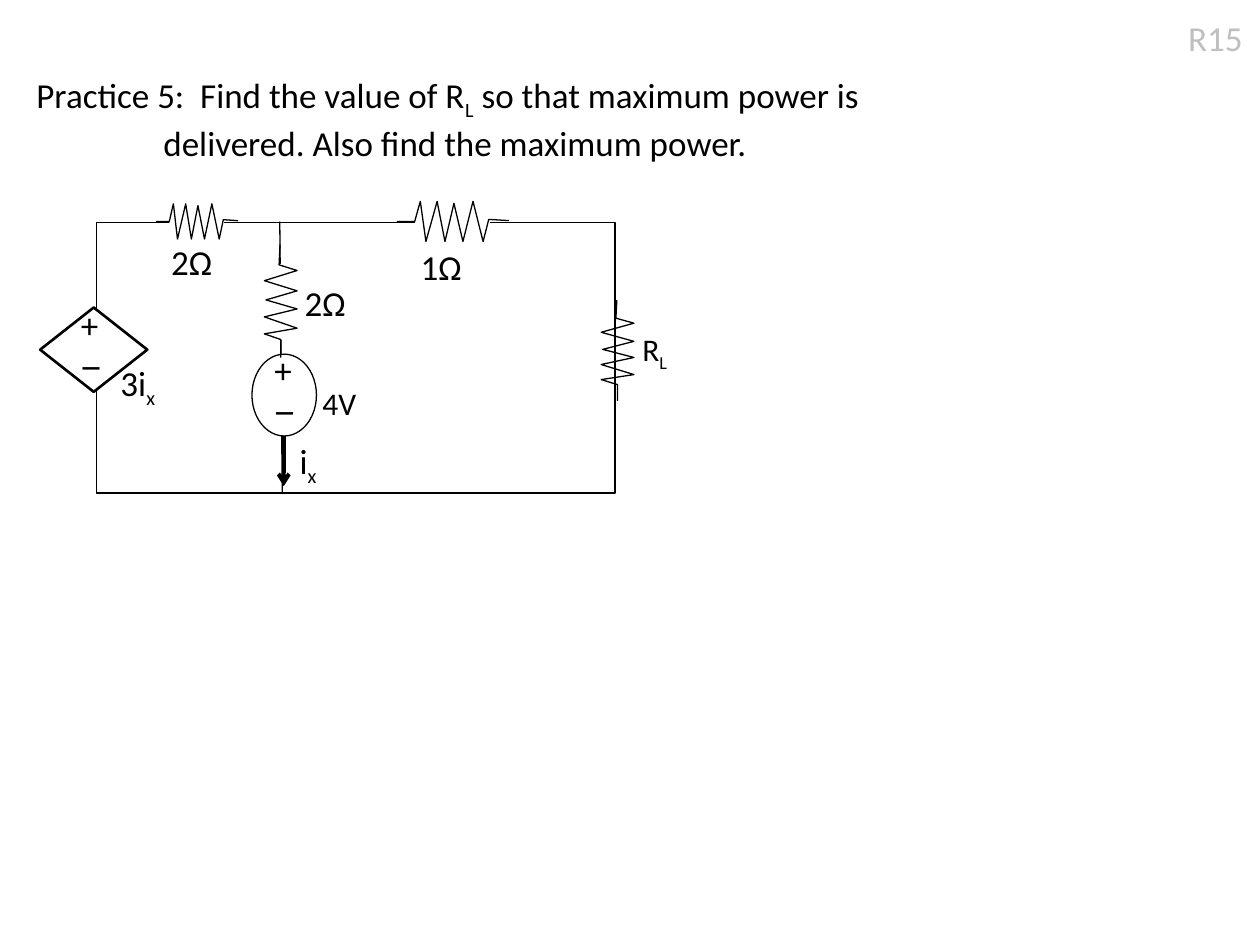
import pptx
import pptx.dml.color
import pptx.enum.shapes
import pptx.enum.text
import pptx.oxml.xmlchemy
import pptx.util

Cm = pptx.util.Cm
Pt = pptx.util.Pt
SHAPE = pptx.enum.shapes.MSO_SHAPE

BLACK = pptx.dml.color.RGBColor(0x00, 0x00, 0x00)
WHITE = pptx.dml.color.RGBColor(0xFF, 0xFF, 0xFF)
GRAY = pptx.dml.color.RGBColor(0xBF, 0xBF, 0xBF)

# Zigzag as fractions of the resistor's length and breadth
ZIGZAG = [(0, 0.5), (0.16, 0.5), (0.21, 0), (0.26, 1), (0.36, 0), (0.43, 1),
          (0.51, 0.05), (0.59, 1), (0.68, 0), (0.77, 1), (0.82, 0.45), (1, 0.48)]
COVER_START, COVER_END = 0.16, 0.83


def style_shape(shape, fill=None, line_width=None):
    shape.shadow.inherit = False
    if fill is None:
        shape.fill.background()
    else:
        shape.fill.solid()
        shape.fill.fore_color.rgb = fill
    if line_width is None:
        shape.line.fill.background()
    else:
        shape.line.color.rgb = BLACK
        shape.line.width = Pt(line_width)


def add_outline(slide, preset, left, top, width, height, fill=None, line_width=None):
    outline = slide.shapes.add_shape(preset, Cm(left), Cm(top), Cm(width), Cm(height))
    style_shape(outline, fill, line_width)


def add_wire(slide, start, end, width=0.75, arrow=False):
    wire = slide.shapes.add_connector(
        pptx.enum.shapes.MSO_CONNECTOR.STRAIGHT, *(Cm(value) for value in start + end))
    wire.line.color.rgb = BLACK
    wire.line.width = Pt(width)
    if arrow:
        tail = pptx.oxml.xmlchemy.OxmlElement("a:tailEnd")
        tail.set("type", "arrow")
        wire.line._get_or_add_ln().append(tail)
    wire._element.spPr.append(pptx.oxml.xmlchemy.OxmlElement("a:effectLst"))


def add_resistor(slide, left, top, width, height, covers_wire=True):
    """Draw a zigzag along the longer side; upright ones run bottom to top."""
    upright = height > width

    def place(along, across):
        if upright:
            return left + across * width, top + (1 - along) * height
        return left + along * width, top + across * height

    if covers_wire:
        x1, y1 = place(COVER_START, 0)
        x2, y2 = place(COVER_END, 1)
        add_outline(slide, SHAPE.RECTANGLE, min(x1, x2), min(y1, y2),
                    abs(x2 - x1), abs(y2 - y1), WHITE)
    points = [tuple(Cm(value) for value in place(*point)) for point in ZIGZAG]
    builder = slide.shapes.build_freeform(*points[0])
    builder.add_line_segments(points[1:], close=False)
    style_shape(builder.convert_to_shape(), line_width=0.75)


def add_run(paragraph, text, size=20, color=BLACK, font="Calibri", subscript=False):
    run = paragraph.add_run()
    run.text = text
    run.font.size = Pt(size)
    run.font.name = font
    run.font.color.rgb = color
    if subscript:
        run.font._element.set("baseline", "-25000")


def add_label(slide, left, top, width, text, subscript="", size=20, color=BLACK):
    label = slide.shapes.add_textbox(Cm(left), Cm(top), Cm(width), Cm(1.1))
    label.text_frame.word_wrap = True
    paragraph = label.text_frame.paragraphs[0]
    add_run(paragraph, text, size, color)
    if subscript:
        add_run(paragraph, subscript, size, color, subscript=True)


def add_polarity(slide, left, top):
    signs = slide.shapes.add_textbox(Cm(left), Cm(top), Cm(1), Cm(2.2)).text_frame
    signs.word_wrap = True
    add_run(signs.paragraphs[0], "+")
    add_run(signs.add_paragraph(), "−", font="Arial")


def add_question(slide):
    title = slide.shapes.title
    title.left, title.top, title.width, title.height = Cm(0.48), Cm(1.35), Cm(17.6), Cm(1.96)
    frame = title.text_frame
    frame.word_wrap = True
    frame.auto_size = pptx.enum.text.MSO_AUTO_SIZE.NONE
    frame.vertical_anchor = pptx.enum.text.MSO_ANCHOR.TOP
    question = frame.paragraphs[0]
    question.alignment = pptx.enum.text.PP_ALIGN.LEFT
    # Hanging indent sets the second line in from the first
    properties = question._p.get_or_add_pPr()
    properties.set("marL", str(Cm(2.56)))
    properties.set("indent", str(-Cm(2.56)))
    add_run(question, "Practice 5:  Find the value of R")
    add_run(question, "L", subscript=True)
    add_run(question, " so that maximum power is ")
    question.add_line_break()
    add_run(question, "delivered. Also find the maximum power.")


def main():
    deck = pptx.Presentation()
    deck.slide_width, deck.slide_height = Cm(25.4), Cm(19.05)
    slide = deck.slides.add_slide(deck.slide_layouts[5])

    # Heading
    add_question(slide)
    add_label(slide, 23.7, 0.2, 1.7, "R15", color=GRAY)

    # Outer loop and middle branch
    add_wire(slide, (5.64, 4.47), (5.69, 9.96))
    add_outline(slide, SHAPE.RECTANGLE, 1.94, 4.48, 10.46, 5.46, line_width=0.75)

    # Load
    add_resistor(slide, 12.12, 6.05, 0.66, 2.03, covers_wire=False)
    add_label(slide, 12.7, 6.53, 1.4, "R", "L", size=18)

    # Branch current
    add_wire(slide, (5.72, 8.61), (5.72, 9.8), 2.25, arrow=True)
    add_label(slide, 5.79, 8.74, 1.1, "i", "x")

    # Voltage source
    add_outline(slide, SHAPE.OVAL, 5.08, 7.14, 1.3, 1.65, WHITE, 0.75)
    add_polarity(slide, 5.28, 6.91)
    add_label(slide, 6.25, 7.62, 1.63, "4V", size=18)

    # Resistors with their values
    add_resistor(slide, 3.15, 4.11, 1.65, 0.71)
    add_label(slide, 3.2, 4.72, 1.42, "2Ω")
    add_resistor(slide, 8, 4.06, 2.26, 0.81)
    add_label(slide, 8.23, 4.83, 1.78, "1Ω")
    add_resistor(slide, 5.33, 4.93, 0.66, 2.28)
    add_label(slide, 5.89, 5.56, 1.42, "2Ω")

    # Dependent source
    add_label(slide, 2.18, 7.16, 1.78, "3i", "x")
    add_outline(slide, SHAPE.DIAMOND, 0.81, 6.2, 2.16, 1.7, WHITE, 1.5)
    add_polarity(slide, 1.38, 5.99)

    deck.save("out.pptx")


if __name__ == "__main__":
    main()
